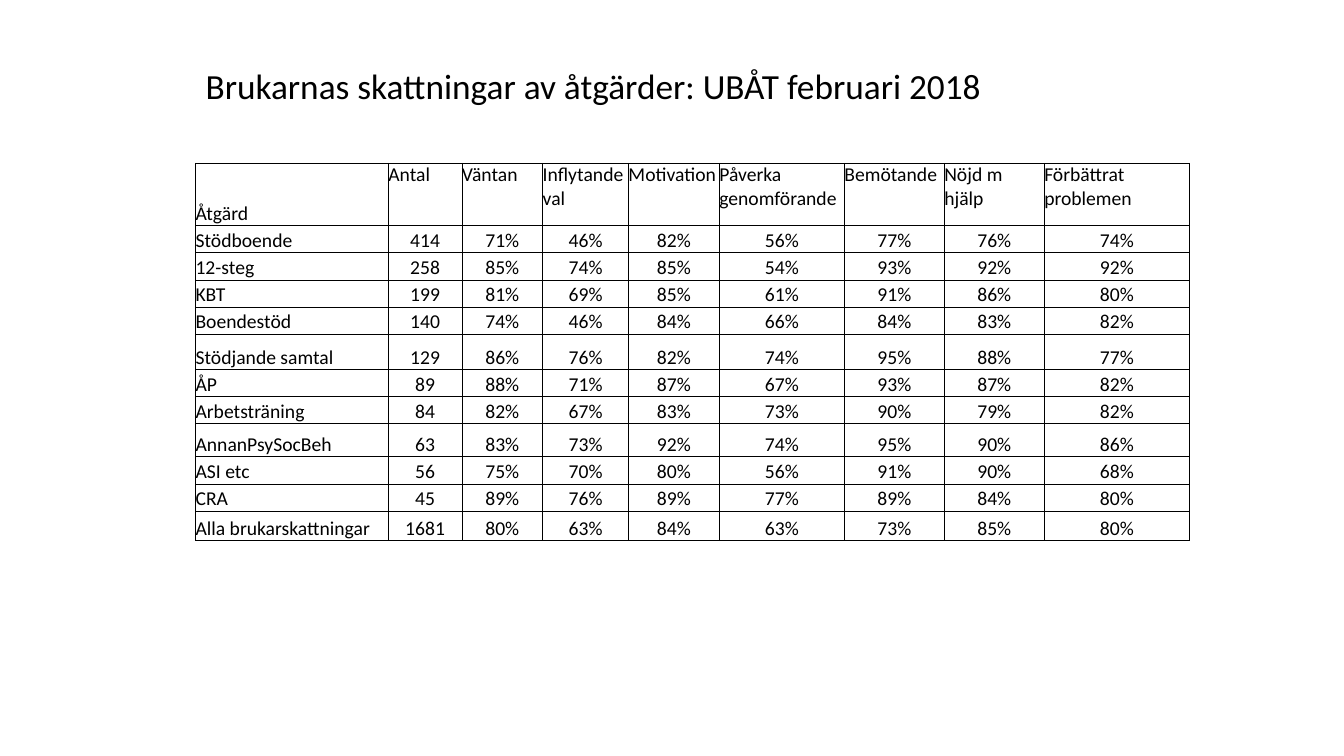
from dataclasses import dataclass

from lxml import etree
from pptx import Presentation
from pptx import util as u
from pptx.dml.color import RGBColor
from pptx.enum import text
from pptx.oxml import ns

SLIDE_W, SLIDE_H = u.Inches(13.33), u.Inches(7.5)


@dataclass(frozen=True)
class Theme:
    font: str = "Calibri"
    ink: str = "000000"
    title_size: float = 25.2
    table_size: float = 14
    border: float = 0.5


THEME = Theme()

# Left, top, width and height as shares of the slide
TITLE_BOX = (0.1455, 0.056, 0.6257, 0.1213)
TABLE_BOX = (0.1455, 0.216, 0.7397, 0.4987)

# Relative widths and heights, scaled to fill the table box
COLUMN_WEIGHTS = (191, 73, 80, 85, 90, 124, 99, 99, 144)
ROW_WEIGHTS = (62, 27, 27, 27, 27, 35, 27, 27, 33, 27, 27, 29)

HEADERS = ("Åtgärd", "Antal", "Väntan", "Inflytande val", "Motivation",
           "Påverka genomförande", "Bemötande", "Nöjd m hjälp",
           "Förbättrat problemen")

# Measure, number of ratings, then percentages
RATINGS = (
    ("Stödboende", 414, 71, 46, 82, 56, 77, 76, 74),
    ("12-steg", 258, 85, 74, 85, 54, 93, 92, 92),
    ("KBT", 199, 81, 69, 85, 61, 91, 86, 80),
    ("Boendestöd", 140, 74, 46, 84, 66, 84, 83, 82),
    ("Stödjande samtal", 129, 86, 76, 82, 74, 95, 88, 77),
    ("ÅP", 89, 88, 71, 87, 67, 93, 87, 82),
    ("Arbetsträning", 84, 82, 67, 83, 73, 90, 79, 82),
    ("AnnanPsySocBeh", 63, 83, 73, 92, 74, 95, 90, 86),
    ("ASI etc", 56, 75, 70, 80, 56, 91, 90, 68),
    ("CRA", 45, 89, 76, 89, 77, 89, 84, 80),
    ("Alla brukarskattningar", 1681, 80, 63, 84, 63, 73, 85, 80),
)


def place(box):
    """Turn shares of the slide into left, top, width and height."""
    return [round(share * side)
            for share, side in zip(box, (SLIDE_W, SLIDE_H) * 2)]


def add_run(p, wording, size):
    r = p.add_run()
    r.text = wording
    r.font.name = THEME.font
    r.font.size = u.Pt(size)
    r.font.bold = False
    r.font.color.rgb = RGBColor.from_string(THEME.ink)


def add_title(slide, wording):
    sp = slide.shapes.title
    sp.left, sp.top, sp.width, sp.height = place(TITLE_BOX)
    tf = sp.text_frame
    tf.word_wrap = True
    tf.vertical_anchor = text.MSO_ANCHOR.MIDDLE
    p = tf.paragraphs[0]
    p.alignment = text.PP_ALIGN.LEFT
    p.line_spacing = 0.9
    add_run(p, wording, THEME.title_size)


def add_borders(cell):
    tc_pr = cell._tc.get_or_add_tcPr()
    for i, side in enumerate(("a:lnL", "a:lnR", "a:lnT", "a:lnB")):
        ln = etree.Element(ns.qn(side), w=str(u.Pt(THEME.border)))
        fill = etree.SubElement(ln, ns.qn("a:solidFill"))
        etree.SubElement(fill, ns.qn("a:srgbClr"), val=THEME.ink)
        tc_pr.insert(i, ln)


def fill_cell(cell, wording, align, anchor):
    cell.margin_left = cell.margin_right = 0
    cell.margin_top = cell.margin_bottom = 0
    cell.vertical_anchor = anchor
    cell.fill.background()
    add_borders(cell)
    p = cell.text_frame.paragraphs[0]
    p.alignment = align
    add_run(p, wording, THEME.table_size)


def add_ratings_table(slide):
    left, top, width, height = place(TABLE_BOX)
    table = slide.shapes.add_table(len(ROW_WEIGHTS), len(COLUMN_WEIGHTS),
                                   left, top, width, height).table
    table.first_row = table.horz_banding = False
    for column, weight in zip(table.columns, COLUMN_WEIGHTS):
        column.width = round(width * weight / sum(COLUMN_WEIGHTS))
    for row, weight in zip(table.rows, ROW_WEIGHTS):
        row.height = round(height * weight / sum(ROW_WEIGHTS))

    rows = [HEADERS] + [(name, str(count), *(f"{share}%" for share in shares))
                        for name, count, *shares in RATINGS]
    for i, row in enumerate(rows):
        for j, wording in enumerate(row):
            is_number = i > 0 and j > 0
            at_top = i == 0 and j > 0
            fill_cell(
                table.cell(i, j), wording,
                text.PP_ALIGN.CENTER if is_number else text.PP_ALIGN.LEFT,
                text.MSO_ANCHOR.TOP if at_top else text.MSO_ANCHOR.BOTTOM)


def main():
    prs = Presentation()
    prs.slide_width, prs.slide_height = SLIDE_W, SLIDE_H
    title_only = prs.slide_layouts[5]
    slide = prs.slides.add_slide(title_only)
    add_title(slide, "Brukarnas skattningar av åtgärder: UBÅT februari 2018")
    add_ratings_table(slide)
    prs.save("out.pptx")


if __name__ == "__main__":
    main()
